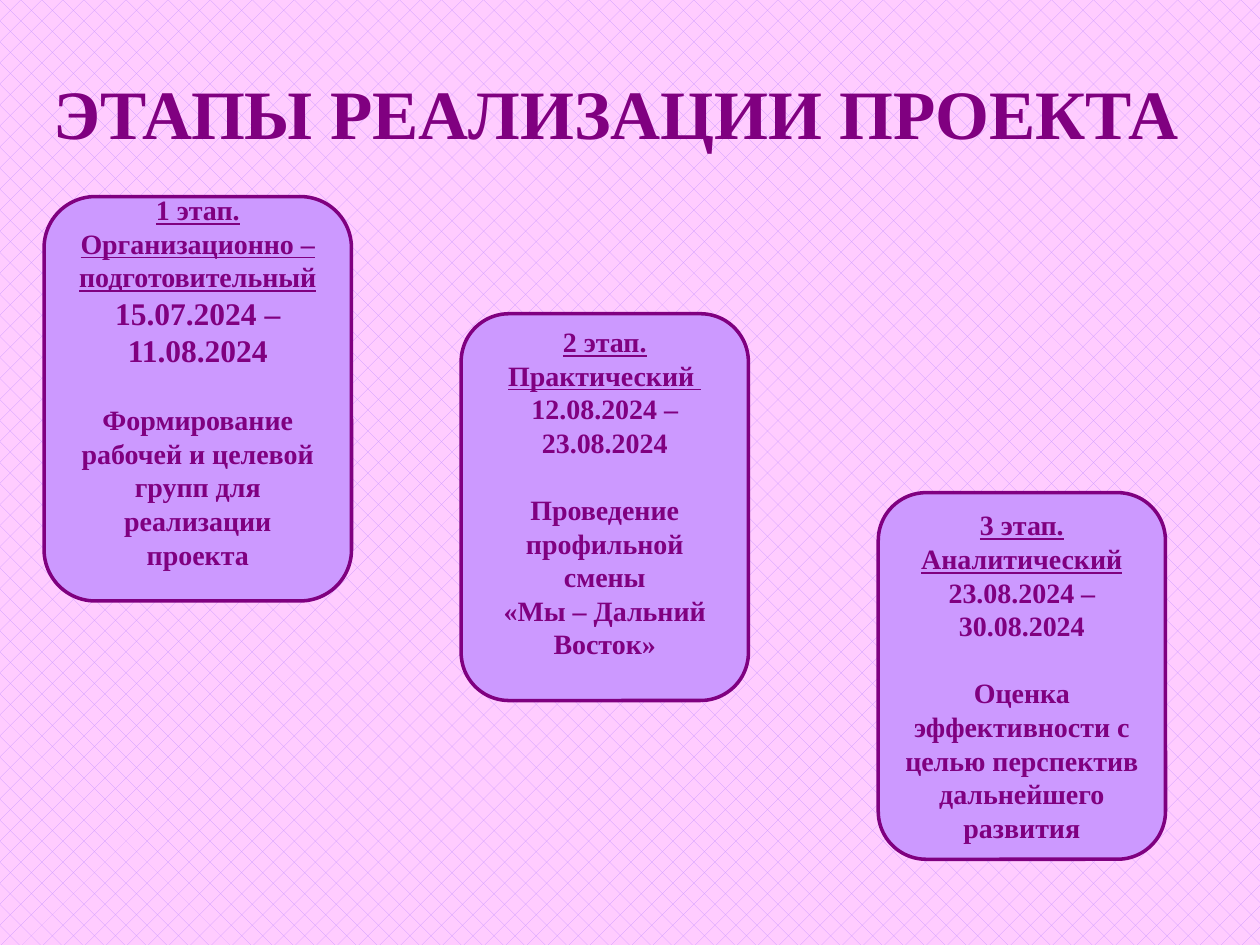
from dataclasses import dataclass

from pptx import Presentation
from pptx.dml.color import RGBColor
from pptx.enum.dml import MSO_PATTERN
from pptx.enum.shapes import MSO_SHAPE
from pptx.enum.text import MSO_ANCHOR, PP_ALIGN
from pptx.util import Inches, Pt

PURPLE = RGBColor(0x80, 0x00, 0x80)
LILAC = RGBColor(0xCC, 0x99, 0xFF)
PINK = RGBColor(0xFF, 0xCC, 0xFF)
FONT = "Times New Roman"
SECTION_GAP = 19.2


@dataclass(frozen=True)
class Stage:
    left: float
    top: float
    width: float
    height: float
    heading: list[str]
    dates: list[str]
    goal: list[str]
    date_size: float = 16
    bottom_inset: float = 0.05


STAGES = [
    Stage(0.35, 1.56, 2.44, 3.21,
          ["1 этап.", "Организационно – подготовительный"],
          ["15.07.2024 –", "11.08.2024"],
          ["Формирование рабочей и целевой групп для реализации проекта"],
          date_size=18, bottom_inset=0.32),
    Stage(3.66, 2.49, 2.28, 3.07,
          ["2 этап. Практический "],
          ["12.08.2024 – 23.08.2024"],
          ["Проведение профильной смены", "«Мы – Дальний Восток»"],
          bottom_inset=0.28),
    Stage(6.97, 3.91, 2.28, 2.91,
          ["3 этап. Аналитический"],
          ["23.08.2024 – 30.08.2024"],
          ["Оценка эффективности с целью перспектив дальнейшего развития"]),
]


def add_text(frame, text: str, *, size: float = 16, underline: bool = False,
             gap: float = 0) -> None:
    para = frame.paragraphs[0]
    if para.runs:
        para = frame.add_paragraph()
    para.alignment = PP_ALIGN.CENTER
    para.space_before = Pt(gap)
    span = para.add_run()
    span.text = text
    span.font.name = FONT
    span.font.size = Pt(size)
    span.font.bold = True
    span.font.underline = underline
    span.font.color.rgb = PURPLE


def add_title(page, text: str) -> None:
    box = page.shapes.add_textbox(Inches(0.28), Inches(0.3), Inches(9.22), Inches(1.17))
    box.text_frame.word_wrap = True
    box.text_frame.vertical_anchor = MSO_ANCHOR.MIDDLE
    add_text(box.text_frame, text, size=39.6)


def add_stage(page, stage: Stage) -> None:
    box = page.shapes.add_shape(
        MSO_SHAPE.ROUNDED_RECTANGLE, Inches(stage.left), Inches(stage.top),
        Inches(stage.width), Inches(stage.height))
    box.shadow.inherit = False
    box.fill.solid()
    box.fill.fore_color.rgb = LILAC
    box.line.color.rgb = PURPLE
    box.line.width = Pt(2)
    frame = box.text_frame
    frame.word_wrap = True
    frame.vertical_anchor = MSO_ANCHOR.MIDDLE
    frame.margin_bottom = Inches(stage.bottom_inset)
    for text in stage.heading:
        add_text(frame, text, underline=True)
    for text in stage.dates:
        add_text(frame, text, size=stage.date_size)
    for index, text in enumerate(stage.goal):
        add_text(frame, text, gap=0 if index else SECTION_GAP)


def main() -> None:
    deck = Presentation()
    deck.slide_width = Inches(10)
    deck.slide_height = Inches(7.5)
    page = deck.slides.add_slide(deck.slide_layouts[6])
    backdrop = page.background.fill
    backdrop.patterned()
    backdrop.pattern = MSO_PATTERN.DOTTED_DIAMOND
    backdrop.fore_color.rgb = LILAC
    backdrop.back_color.rgb = PINK
    add_title(page, "ЭТАПЫ РЕАЛИЗАЦИИ ПРОЕКТА")
    for stage in STAGES:
        add_stage(page, stage)
    deck.save("out.pptx")


if __name__ == "__main__":
    main()
